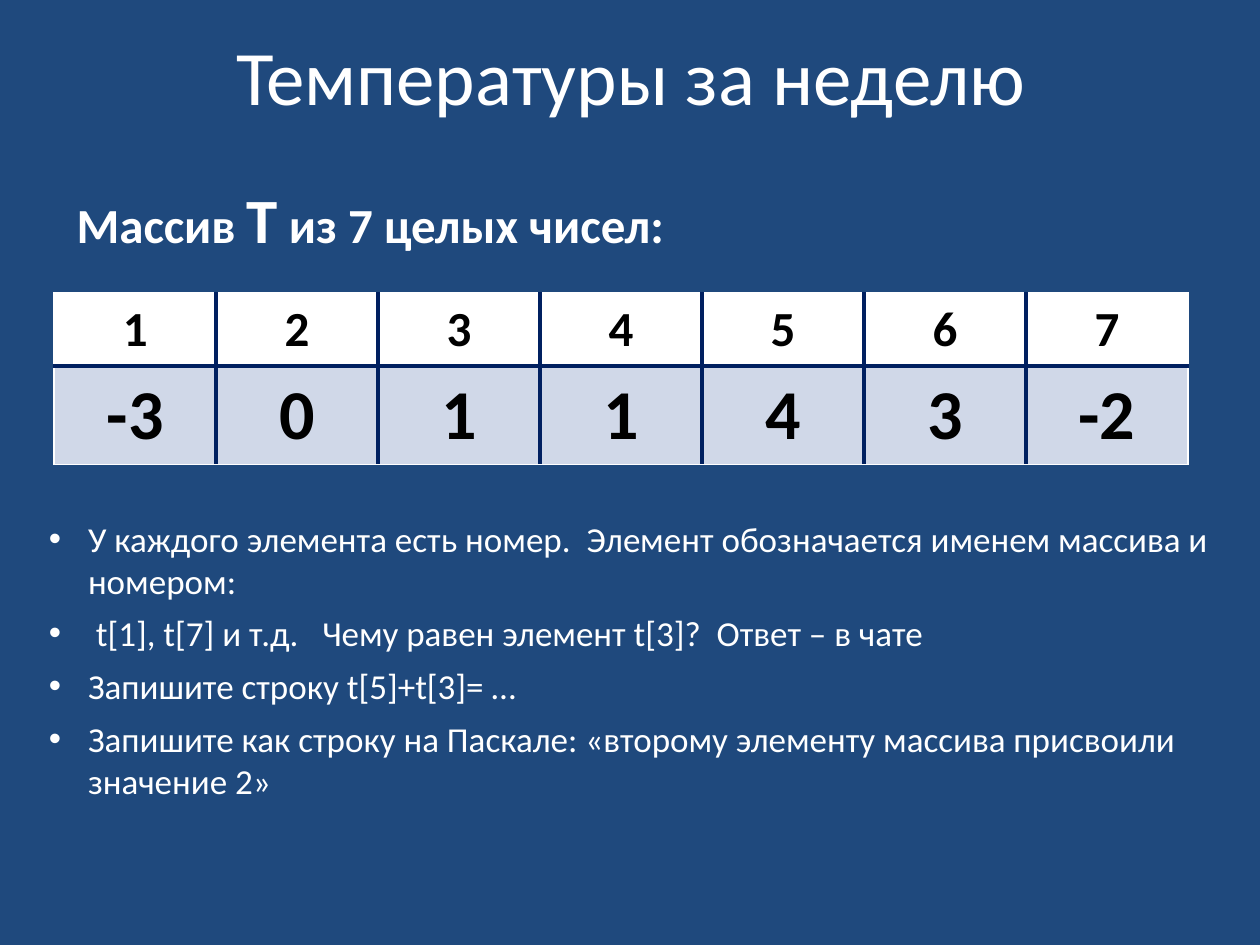
from dataclasses import dataclass

from pptx import Presentation
from pptx import util as u
from pptx.dml.color import RGBColor
from pptx.enum import text
from pptx.oxml.ns import qn
from lxml import etree

WIDTH, HEIGHT = 10, 7.5
FONT = "Calibri"
COLOURS = {"page": "1F497D", "white": "FFFFFF", "black": "000000",
           "rule": "002060", "band": "D0D8E8"}


@dataclass(frozen=True)
class Area:
    """A rectangle given as shares of the slide's width and height."""
    left: float
    top: float
    width: float
    height: float

    def emu(self) -> list[int]:
        sizes = (WIDTH, HEIGHT, WIDTH, HEIGHT)
        shares = (self.left, self.top, self.width, self.height)
        return [u.Inches(share * size) for share, size in zip(shares, sizes)]


@dataclass(frozen=True)
class TableRow:
    values: list[int]
    height: float
    size: int
    fill: str


TITLE = Area(0.051, 0.017, 0.9, 0.124)
CAPTION = Area(0.051, 0.185, 0.492, 0.095)
GRID = Area(0.043, 0.31, 0.9, 0.181)
NOTES = Area(0.029, 0.541, 0.952, 0.316)

ROWS = [
    TableRow([1, 2, 3, 4, 5, 6, 7], 0.58, 28, "white"),
    TableRow([-3, 0, 1, 1, 4, 3, -2], 0.78, 40, "band"),
]
BULLETS = [
    "У каждого элемента есть номер.  Элемент обозначается именем массива и номером:",
    " t[1], t[7] и т.д.   Чему равен элемент t[3]?  Ответ – в чате",
    "Запишите строку t[5]+t[3]= …",
    "Запишите как строку на Паскале: «второму элементу массива присвоили значение 2»",
]


def rgb(name: str) -> RGBColor:
    return RGBColor.from_string(COLOURS[name])


def add_span(para, words: str, size: int, colour: str = "white", bold: bool = False) -> None:
    span = para.add_run()
    span.text = words
    formats = {"name": FONT, "size": u.Pt(size), "bold": bold}
    for name, value in formats.items():
        setattr(span.font, name, value)
    span.font.color.rgb = rgb(colour)


def add_box(page, area: Area, wrap: bool = True):
    frame = page.shapes.add_textbox(*area.emu()).text_frame
    frame.word_wrap = wrap
    return frame


def add_bullet(para) -> None:
    properties = para._p.get_or_add_pPr()
    indent = u.Inches(0.31)
    properties.set("marL", str(indent))
    properties.set("indent", str(-indent))
    etree.SubElement(properties, qn("a:buFont"), typeface="Arial")
    etree.SubElement(properties, qn("a:buChar"), char="•")


def set_border(cell, side: str, inner: bool) -> None:
    colour, points = ("rule", 3) if inner else ("white", 1)
    line = etree.SubElement(cell._tc.get_or_add_tcPr(), qn(f"a:ln{side}"),
                            w=str(u.Pt(points)))
    fill = etree.SubElement(line, qn("a:solidFill"))
    etree.SubElement(fill, qn("a:srgbClr"), val=COLOURS[colour])


def add_grid(page, area: Area, rows: list[TableRow]) -> None:
    columns = len(rows[0].values)
    table = page.shapes.add_table(len(rows), columns, *area.emu()).table
    for r, row in enumerate(rows):
        table.rows[r].height = u.Inches(row.height)
        for c, value in enumerate(row.values):
            cell = table.cell(r, c)
            # Inner edges are thick and dark, the outer frame thin and white
            edges = {"L": c > 0, "R": c < columns - 1,
                     "T": r > 0, "B": r < len(rows) - 1}
            for side, inner in edges.items():
                set_border(cell, side, inner)
            cell.fill.solid()
            cell.fill.fore_color.rgb = rgb(row.fill)
            cell.vertical_anchor = text.MSO_ANCHOR.MIDDLE
            para = cell.text_frame.paragraphs[0]
            para.alignment = text.PP_ALIGN.CENTER
            add_span(para, str(value), row.size, "black", bold=True)


def main() -> None:
    deck = Presentation()
    deck.slide_width, deck.slide_height = u.Inches(WIDTH), u.Inches(HEIGHT)
    page = deck.slides.add_slide(deck.slide_layouts[6])
    page.background.fill.solid()
    page.background.fill.fore_color.rgb = rgb("page")

    # Title
    title = add_box(page, TITLE)
    title.vertical_anchor = text.MSO_ANCHOR.MIDDLE
    title.paragraphs[0].alignment = text.PP_ALIGN.CENTER
    add_span(title.paragraphs[0], "Температуры за неделю", 44)

    # Week of temperatures
    add_grid(page, GRID, ROWS)

    # Table caption
    caption = add_box(page, CAPTION, wrap=False)
    for words, size in (("Массив ", 28), ("T", 36), (" из 7 целых чисел:", 28)):
        add_span(caption.paragraphs[0], words, size, bold=True)

    # Explanations and questions
    notes = add_box(page, NOTES)
    for number, words in enumerate(BULLETS):
        para = notes.add_paragraph() if number else notes.paragraphs[0]
        para.space_before = u.Pt(6)
        add_bullet(para)
        add_span(para, words, 20)

    deck.save("out.pptx")


if __name__ == "__main__":
    main()
